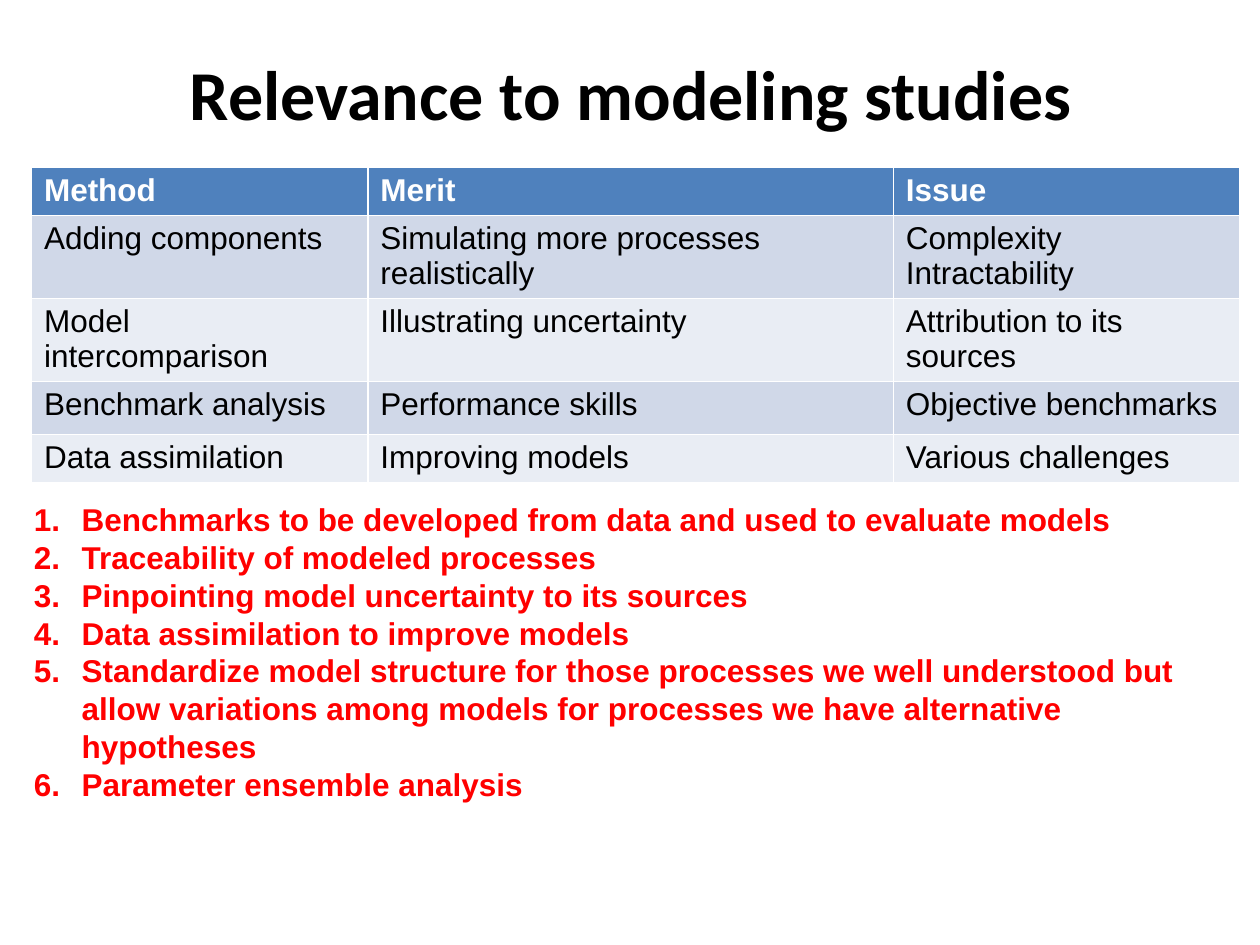
"""Build a slide on the relevance of benchmarks to modeling studies."""
from lxml.etree import SubElement
from pptx import Presentation
from pptx.dml.color import RGBColor
from pptx.enum.text import MSO_ANCHOR, PP_ALIGN
from pptx.oxml.ns import qn
from pptx.util import Inches, Pt


def add_run(paragraph, text, font_name, size, color, bold):
    """Add one formatted run to a paragraph."""
    run = paragraph.add_run()
    run.text = text
    run.font.name = font_name
    run.font.size = Pt(size)
    run.font.bold = bold
    run.font.color.rgb = RGBColor.from_string(color)


presentation = Presentation()
presentation.slide_width = Inches(10)
presentation.slide_height = Inches(7.5)
slide = presentation.slides.add_slide(presentation.slide_layouts[5])

left, width = Inches(0.17), Inches(9.67)
title = slide.shapes.title
title.left, title.top = left, Inches(0.3)
title.width, title.height = width, Inches(0.87)
title.text_frame.vertical_anchor = MSO_ANCHOR.MIDDLE
title_paragraph = title.text_frame.paragraphs[0]
title_paragraph.alignment = PP_ALIGN.CENTER
add_run(title_paragraph, "Relevance to modeling studies", "Calibri", 40, "000000", True)

rows = [
    ("Method", "Merit", "Issue"),
    ("Adding components", "Simulating more processes realistically", "Complexity Intractability"),
    ("Model intercomparison", "Illustrating uncertainty", "Attribution to its sources"),
    ("Benchmark analysis", "Performance skills", "Objective benchmarks"),
    ("Data assimilation", "Improving models", "Various challenges"),
]
column_widths = [2.67, 4.17, 2.75]
row_heights = [0.38, 0.66, 0.66, 0.42, 0.38]
table = slide.shapes.add_table(
    len(rows), len(column_widths), Inches(0.25), Inches(1.33),
    Inches(sum(column_widths)), Inches(sum(row_heights)),
).table
for column, column_width in zip(table.columns, column_widths):
    column.width = Inches(column_width)
for row_index, (texts, row_height) in enumerate(zip(rows, row_heights)):
    table.rows[row_index].height = Inches(row_height)
    is_header = row_index == 0
    band = "4F81BD" if is_header else ("E9EDF4", "D0D8E8")[row_index % 2]
    for column_index, text in enumerate(texts):
        cell = table.cell(row_index, column_index)
        cell.margin_top = cell.margin_bottom = Inches(0.04)
        cell.fill.solid()
        cell.fill.fore_color.rgb = RGBColor.from_string(band)
        add_run(cell.text_frame.paragraphs[0], text, "Arial", 18,
                "FFFFFF" if is_header else "000000", is_header)

recommendations = [
    "Benchmarks to be developed from data and used to evaluate models",
    "Traceability of modeled processes",
    "Pinpointing model uncertainty to its sources",
    "Data assimilation to improve models",
    "Standardize model structure for those processes we well understood but "
    "allow variations among models for processes we have alternative hypotheses",
    "Parameter ensemble analysis",
]
text_frame = slide.shapes.add_textbox(left, Inches(3.92), width, Inches(2.52)).text_frame
text_frame.word_wrap = True
for index, text in enumerate(recommendations):
    paragraph = text_frame.paragraphs[0] if index == 0 else text_frame.add_paragraph()
    paragraph.line_spacing = Pt(21.6)
    properties = paragraph._p.get_or_add_pPr()
    properties.set("marL", str(Inches(0.38)))
    properties.set("indent", str(-Inches(0.38)))
    SubElement(properties, qn("a:buFont"), typeface="+mj-lt")
    SubElement(properties, qn("a:buAutoNum"), type="arabicPeriod")
    add_run(paragraph, text, "Arial", 18, "FF0000", True)

presentation.save("out.pptx")
